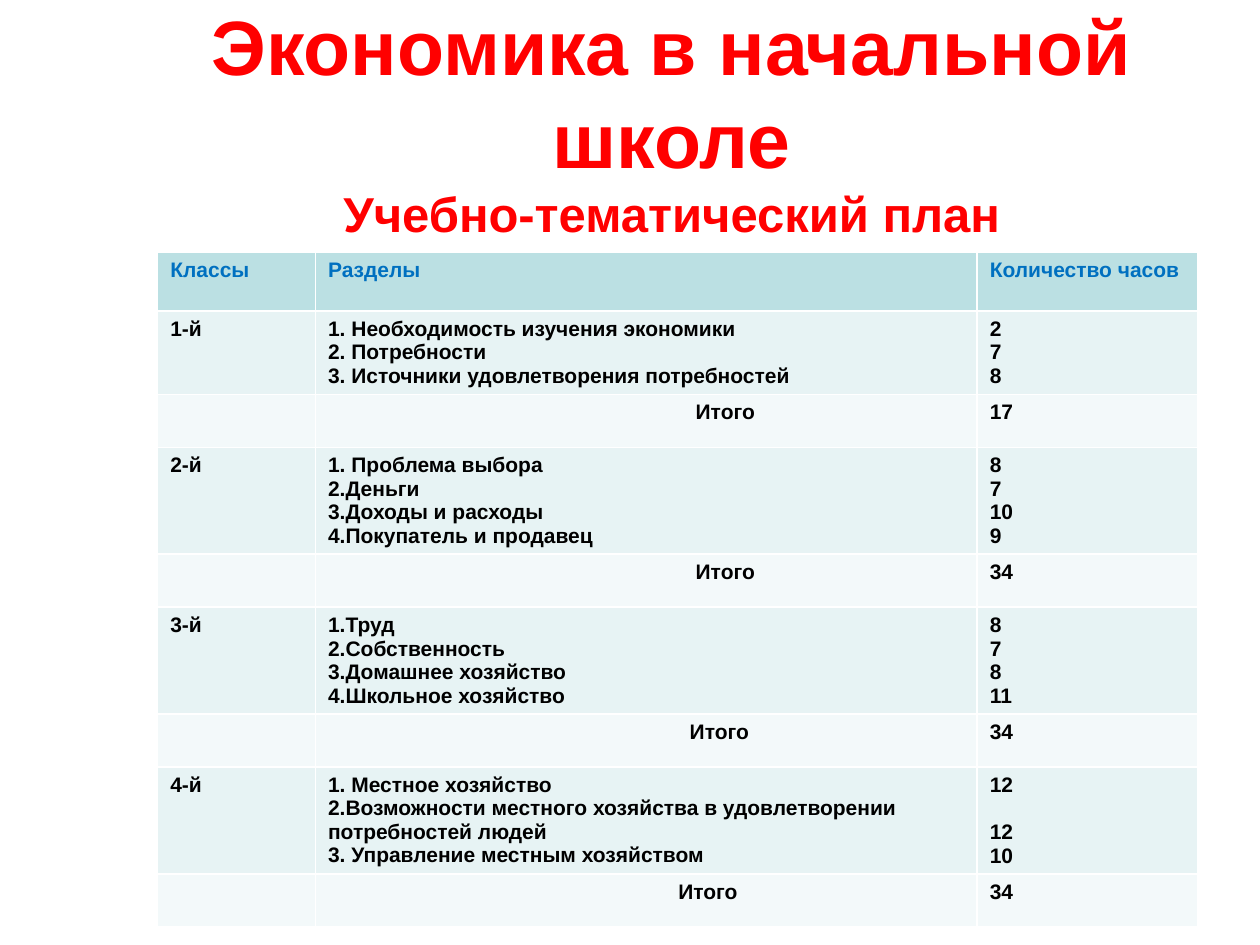
import pptx
import pptx.dml.color
import pptx.enum.text
import pptx.util
import pptx.oxml.ns
import lxml.etree

Cm = pptx.util.Cm
Pt = pptx.util.Pt
RGB = pptx.dml.color.RGBColor
RED = RGB(0xFF, 0x00, 0x00)
BLUE = RGB(0x00, 0x70, 0xC0)
BLACK = RGB(0x00, 0x00, 0x00)
HEAD = RGB(0xBB, 0xE0, 0xE3)
BAND = RGB(0xE7, 0xF3, 0xF4)
PALE = RGB(0xF3, 0xF9, 0xFA)

FACE = "Arial"
SIZE = 12
COLS = [3.18, 13.34, 4.44]
LINE, PAD, TOTAL = 0.47, 0.27, 1.07
NAMES = ["Классы", "Разделы", "Количество часов"]
PLAN = [
    ("1-й", ["1. Необходимость изучения экономики", "2. Потребности",
             "3. Источники удовлетворения потребностей"],
     ["2", "7", "8"], "17", 7.41),
    ("2-й", ["1. Проблема выбора", "2.Деньги", "3.Доходы и расходы",
             "4.Покупатель и продавец"],
     ["8", "7", "10", "9"], "34", 7.41),
    ("3-й", ["1.Труд", "2.Собственность", "3.Домашнее хозяйство",
             "4.Школьное хозяйство"],
     ["8", "7", "8", "11"], "34", 7.29),
    ("4-й", ["1. Местное хозяйство",
             "2.Возможности местного хозяйства в удовлетворении потребностей людей",
             "3. Управление местным хозяйством"],
     ["12", "12", "10"], "34", 7.06),
]


def style(run, size, color):
    run.font.name = FACE
    run.font.size = Pt(size)
    run.font.bold = True
    run.font.color.rgb = color


def add_title(slide, left, top, width, height):
    title = slide.shapes.title
    title.left, title.top, title.width, title.height = map(
        Cm, (left, top, width, height))
    frame = title.text_frame
    frame.auto_size = pptx.enum.text.MSO_AUTO_SIZE.NONE
    frame.vertical_anchor = pptx.enum.text.MSO_ANCHOR.MIDDLE
    para = frame.paragraphs[0]
    para.text = "Экономика в начальной школе\vУчебно-тематический план"
    para.alignment = pptx.enum.text.PP_ALIGN.CENTER
    for run, size in zip(para.runs, (44, 28)):
        style(run, size, RED)


def fill_cell(cell, lines, back, color=BLACK):
    cell.fill.solid()
    cell.fill.fore_color.rgb = back
    cell.text_frame.text = "\n".join(lines)
    for para in cell.text_frame.paragraphs:
        for run in para.runs:
            style(run, SIZE, color)
        if not para.runs:
            end = lxml.etree.SubElement(
                para._p, pptx.oxml.ns.qn("a:endParaRPr"))
            end.set("sz", str(SIZE * 100))


def add_plan(slide, left, top):
    rows = [([[name] for name in NAMES], HEAD, BLUE, 1.19)]
    for grade, parts, hours, total, indent in PLAN:
        count = 4 if grade == "4-й" else len(parts)
        rows.append(([[grade], parts, hours], BAND, BLACK, count * LINE + PAD))
        rows.append(([[""], ["Итого"], [total]], PALE, BLACK, TOTAL))
    frame = slide.shapes.add_table(
        len(rows), len(COLS), Cm(left), Cm(top), Cm(sum(COLS)),
        Cm(sum(row[3] for row in rows)))
    table = frame.table
    for col, width in zip(table.columns, COLS):
        col.width = Cm(width)
    for num, (texts, back, color, height) in enumerate(rows):
        table.rows[num].height = Cm(height)
        for cell, lines in zip(table.rows[num].cells, texts):
            fill_cell(cell, lines, back, color)
    for num, item in enumerate(PLAN):
        para = table.cell(2 * num + 2, 1).text_frame.paragraphs[0]
        para._p.get_or_add_pPr().set("marL", str(Cm(item[4])))
    wrapped = table.cell(len(rows) - 2, 2).text_frame.paragraphs[1]
    wrapped.space_before = Pt(13.5)


def main():
    deck = pptx.Presentation()
    deck.slide_width, deck.slide_height = Cm(25.4), Cm(19.05)
    slide = deck.slides.add_slide(deck.slide_layouts[5])
    add_title(slide, 2.11, 0.84, 22.86, 3.18)
    add_plan(slide, 3.18, 5.08)
    deck.save("out.pptx")


if __name__ == "__main__":
    main()
